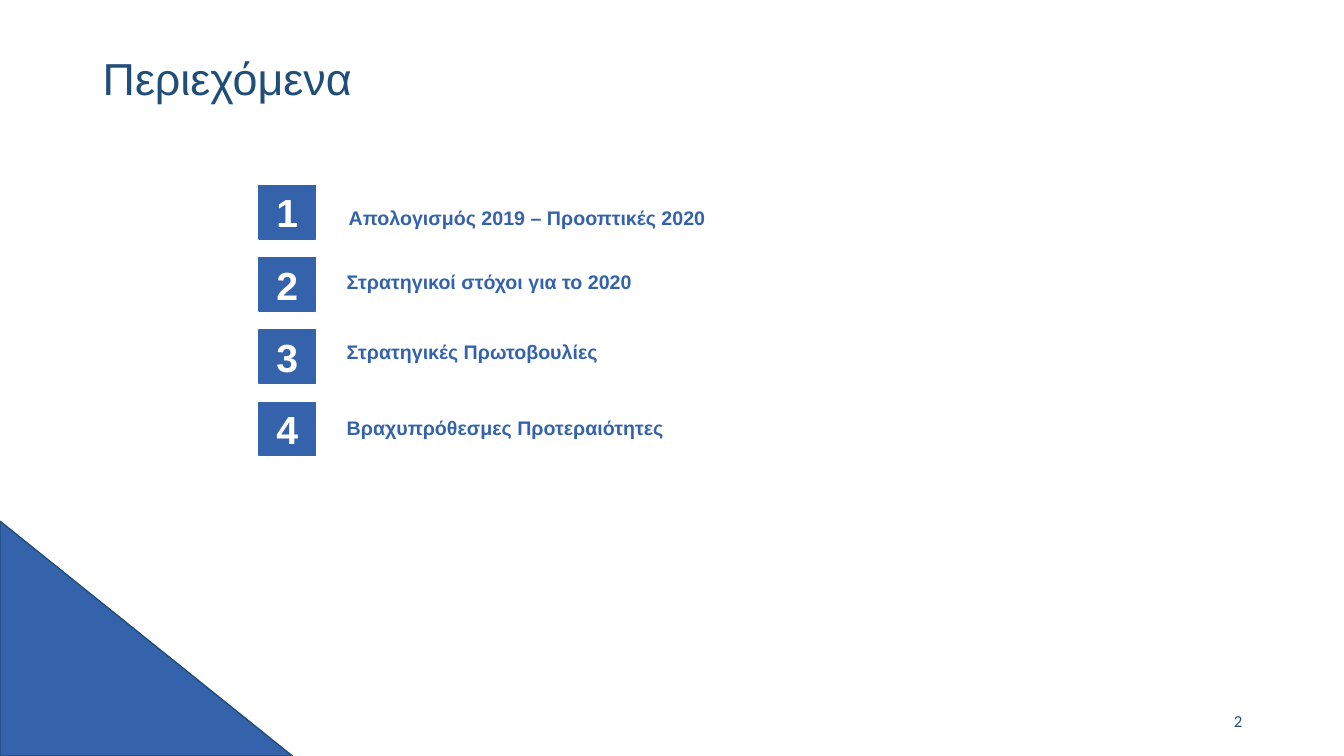
from pptx import Presentation
from pptx.dml.color import RGBColor
from pptx.enum.shapes import MSO_SHAPE
from pptx.enum.text import MSO_ANCHOR, PP_ALIGN
from pptx.util import Inches, Pt

BLUE = RGBColor(0x34, 0x62, 0xAB)
NAVY = RGBColor(0x1F, 0x4E, 0x79)
WHITE = RGBColor(0xFF, 0xFF, 0xFF)

ROW_PITCH = 0.717
# Wording, then the label's left and top relative to its number square
CONTENTS = [
    ("Απολογισμός 2019 – Προοπτικές 2020", 0.79, 0.12),
    ("Στρατηγικοί στόχοι για το 2020", 0.77, 0.04),
    ("Στρατηγικές Πρωτοβουλίες", 0.77, 0.02),
    ("Βραχυπρόθεσμες Προτεραιότητες", 0.77, 0.06),
]


def write(holder, text, size, color, font="Arial", bold=False, align=PP_ALIGN.LEFT):
    frame = holder.text_frame
    frame.word_wrap = True
    frame.vertical_anchor = MSO_ANCHOR.MIDDLE
    paragraph = frame.paragraphs[0]
    paragraph.text = text
    paragraph.alignment = align
    paragraph.font.name = font
    paragraph.font.size = Pt(size)
    paragraph.font.bold = bold
    paragraph.font.color.rgb = color
    return paragraph


def add_text(slide, left, top, width, height, text, size, color, **style):
    box = slide.shapes.add_textbox(Inches(left), Inches(top), Inches(width), Inches(height))
    return write(box, text, size, color, **style)


def add_block(slide, preset, left, top, width, height, outline):
    block = slide.shapes.add_shape(
        preset, Inches(left), Inches(top), Inches(width), Inches(height))
    block.shadow.inherit = False
    block.fill.solid()
    block.fill.fore_color.rgb = BLUE
    block.line.color.rgb = outline
    block.line.width = Pt(1)
    return block


def add_corner(slide, left, top, width, height):
    add_block(slide, MSO_SHAPE.RIGHT_TRIANGLE, left, top, width, height, NAVY)


def add_title(slide, left, top, width, height):
    title = add_text(slide, left, top, width, height, "Περιεχόμενα", 32, NAVY)
    title.line_spacing = 0.9


def add_contents(slide, left, top, width):
    for index, (topic, label_dx, label_dy) in enumerate(CONTENTS):
        row_top = top + index * ROW_PITCH
        # Number square
        number = add_block(slide, MSO_SHAPE.RECTANGLE, left, row_top, 0.56, 0.53, BLUE)
        write(number, str(index + 1), 28, WHITE, bold=True, align=PP_ALIGN.CENTER)
        # Topic label
        add_text(slide, left + label_dx, row_top + label_dy, width - 0.77, 0.39,
                 topic, 14, BLUE, bold=True)


def add_page_number(slide, left, top, width, height):
    add_text(slide, left, top, width, height, "2", 12, NAVY,
             font="Calibri", align=PP_ALIGN.RIGHT)


def main():
    deck = Presentation()
    deck.slide_width, deck.slide_height = Inches(13.33), Inches(7.5)
    slide = deck.slides.add_slide(deck.slide_layouts[6])
    add_corner(slide, 0, 5.17, 2.9, 2.33)
    add_title(slide, 0.92, 0.4, 11.5, 0.81)
    add_contents(slide, 2.57, 1.84, 7.39)
    add_page_number(slide, 9.42, 6.95, 3, 0.4)
    deck.save("out.pptx")


if __name__ == "__main__":
    main()
